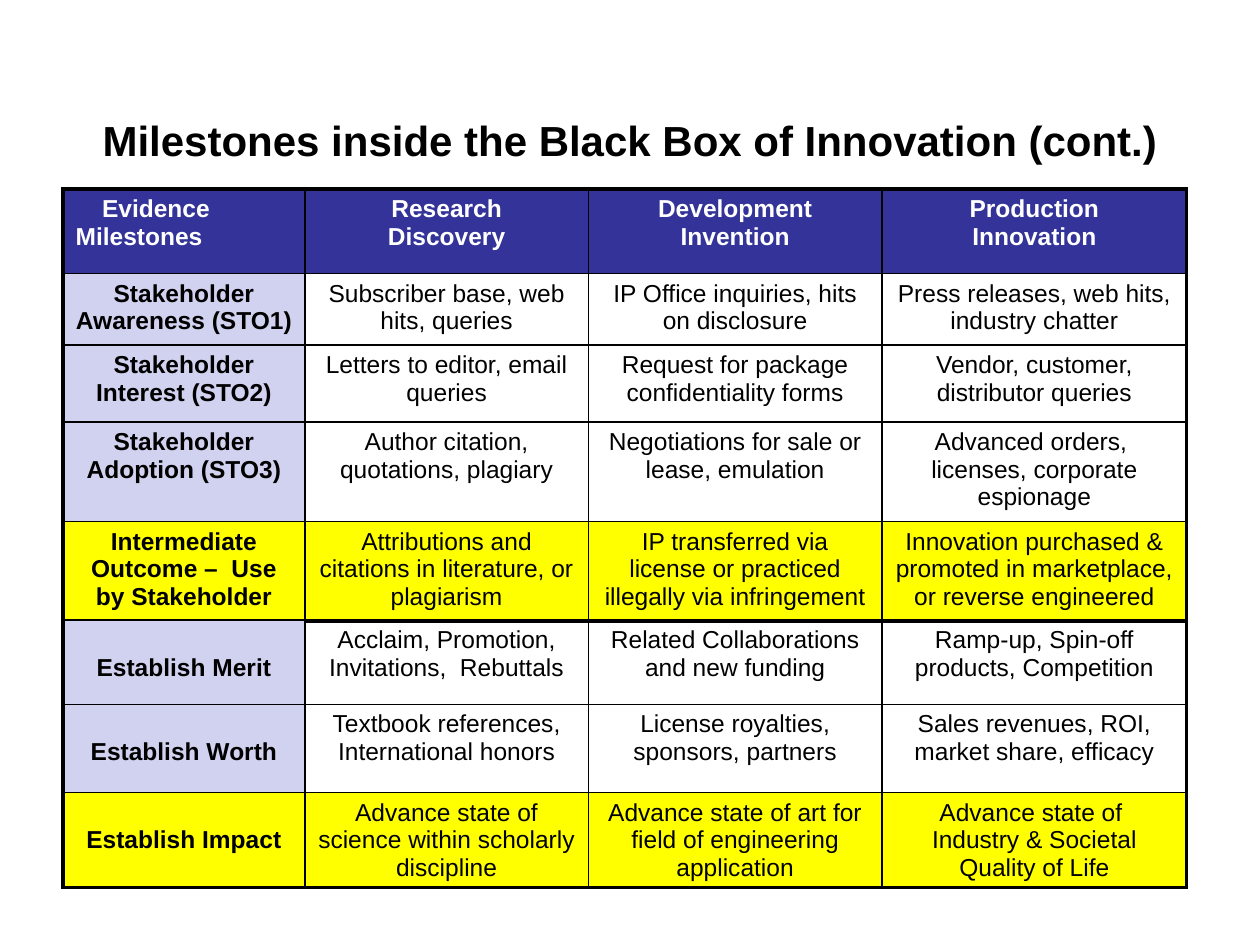
from lxml import etree
from pptx import Presentation
from pptx.dml.color import RGBColor
from pptx.enum.text import MSO_ANCHOR, PP_ALIGN
from pptx.oxml.ns import qn
from pptx.util import Inches, Pt

CENTER, LEFT = PP_ALIGN.CENTER, PP_ALIGN.LEFT
TOP = MSO_ANCHOR.TOP

FONT = "Arial"
BLACK, WHITE = "000000", "FFFFFF"
NAVY, LAVENDER, YELLOW = "333399", "D1D1F0", "FFFF00"
THIN, THICK = 1, 2
TABLE_LEFT = 0.5
COLUMN_WIDTHS = [1.92, 2.25, 2.33, 2.42]
LINE_DROP = 0.22  # one line of 14 pt text

HEADINGS = [
    (0.67, ["Evidence\nMilestones", "Research\nDiscovery",
            "Development\nInvention", "Production\nInnovation"]),
]
STAKEHOLDER_STAGES = [
    (0.57, ["Stakeholder Awareness (STO1)",
            "Subscriber base, web hits, queries",
            "IP Office inquiries, hits on disclosure",
            "Press releases, web hits, industry chatter"]),
    (0.61, ["Stakeholder Interest (STO2)",
            "Letters to editor, email queries",
            "Request for package confidentiality forms",
            "Vendor, customer, distributor queries"]),
    (0.79, ["Stakeholder Adoption (STO3)",
            "Author citation, quotations, plagiary",
            "Negotiations for sale or lease, emulation",
            "Advanced orders,  licenses, corporate espionage"]),
    (0.79, ["Intermediate Outcome –  Use by Stakeholder",
            "Attributions and citations in literature, or plagiarism",
            "IP transferred via license or practiced illegally via infringement",
            "Innovation purchased & promoted in marketplace, or reverse engineered"]),
]
ESTABLISHED_RESULTS = [
    (0.67, ["Establish Merit",
            "Acclaim, Promotion, Invitations,  Rebuttals",
            "Related Collaborations and new funding",
            "Ramp-up, Spin-off products, Competition"]),
    (0.7, ["Establish Worth",
           "Textbook references, International honors",
           "License royalties, sponsors, partners",
           "Sales revenues, ROI, market share, efficacy"]),
    (0.75, ["Establish Impact",
            "Advance state of science within scholarly discipline",
            "Advance state of art for field of engineering application",
            "Advance state of  Industry & Societal Quality of Life"]),
]


def rgb(color):
    return RGBColor.from_string(color)


def style_paragraph(paragraph, size, color, bold, align=CENTER):
    paragraph.alignment = align
    font = paragraph.font
    font.name, font.size, font.bold = FONT, Pt(size), bold
    font.color.rgb = rgb(color)


def add_borders(cell, left, right, top, bottom):
    """Draw black cell edges; call before the fill is set."""
    properties = cell._tc.get_or_add_tcPr()
    for edge, width in zip("LRTB", (left, right, top, bottom)):
        line = etree.SubElement(properties, qn(f"a:ln{edge}"), w=str(Pt(width)))
        fill = etree.SubElement(line, qn("a:solidFill"))
        etree.SubElement(fill, qn("a:srgbClr"), val=BLACK)


def fill_cell(cell, color):
    if color:
        cell.fill.solid()
        cell.fill.fore_color.rgb = rgb(color)
    else:
        cell.fill.background()


def add_milestone_table(slide, top, rows, header=False, label_drop=0):
    """Add one section; its last row is an outcome unless it is the header."""
    height = sum(row_height for row_height, _ in rows)
    table = slide.shapes.add_table(
        len(rows), len(COLUMN_WIDTHS), Inches(TABLE_LEFT), Inches(top),
        Inches(sum(COLUMN_WIDTHS)), Inches(height)).table
    table.first_row = table.horz_banding = False
    for column, width in zip(table.columns, COLUMN_WIDTHS):
        column.width = Inches(width)

    last_column = len(COLUMN_WIDTHS) - 1
    for r, (row_height, texts) in enumerate(rows):
        table.rows[r].height = Inches(row_height)
        outcome = not header and r == len(rows) - 1
        for c, text in enumerate(texts):
            cell, label = table.cell(r, c), c == 0
            add_borders(cell,
                        left=THICK if label else THIN,
                        right=THICK if c == last_column else THIN,
                        top=THICK if header else THIN,
                        bottom=THICK if outcome else THIN)
            if header:
                fill_cell(cell, NAVY)
            elif outcome:
                fill_cell(cell, YELLOW)
            else:
                fill_cell(cell, LAVENDER if label else None)
            if label:
                cell.margin_top = Inches(0.05 + label_drop)
            cell.text = text
            for paragraph in cell.text_frame.paragraphs:
                style_paragraph(paragraph, 14, WHITE if header else BLACK,
                                header or label,
                                LEFT if header and label else CENTER)
    return table


def indent(paragraph, distance):
    paragraph._p.get_or_add_pPr().set("marL", str(Inches(distance)))


def add_title(slide, text):
    frame = slide.shapes.add_textbox(
        Inches(0.5), Inches(0.83), Inches(9), Inches(1.25)).text_frame
    frame.word_wrap = True
    frame.vertical_anchor = TOP
    frame.margin_top = Inches(0.08)
    frame.text = text
    style_paragraph(frame.paragraphs[0], 24, BLACK, True)


def main():
    presentation = Presentation()
    presentation.slide_width, presentation.slide_height = Inches(10), Inches(7.5)
    slide = presentation.slides.add_slide(presentation.slide_layouts[6])

    headings = add_milestone_table(slide, 1.5, HEADINGS, header=True)
    indent(headings.cell(0, 0).text_frame.paragraphs[0], 0.21)
    add_milestone_table(slide, 2.17, STAKEHOLDER_STAGES)
    add_milestone_table(slide, 4.92, ESTABLISHED_RESULTS, label_drop=LINE_DROP)
    add_title(slide, "Milestones inside the Black Box of Innovation (cont.)")

    presentation.save("out.pptx")


if __name__ == "__main__":
    main()
